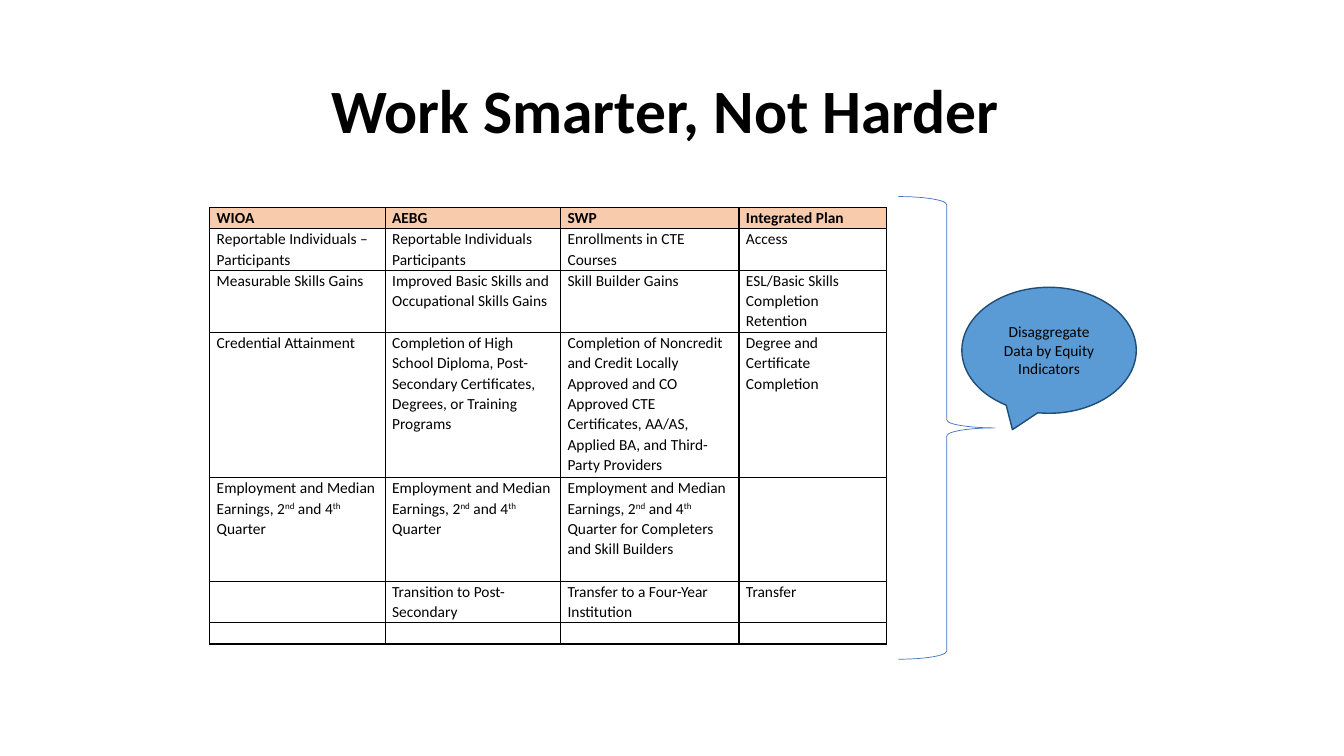
"""Build the Work Smarter, Not Harder slide with its table, brace and callout."""
from lxml import etree
from pptx import Presentation
from pptx import util as u
from pptx.dml.color import RGBColor
from pptx.enum import shapes, text
from pptx.oxml import ns

PX = 9144
FONT = "Calibri"
BLACK = "000000"
COLUMNS = [174, 174, 177, 146]
ROW_HEIGHTS = [21, 41, 62, 144, 103, 41, 21]
EARNINGS = "Employment and Median Earnings, 2^nd^ and 4^th^ Quarter"
ROWS = [
    ["WIOA", "AEBG", "SWP", "Integrated Plan"],
    ["Reportable Individuals –Participants", "Reportable Individuals\nParticipants",
     "Enrollments in CTE Courses", "Access"],
    ["Measurable Skills Gains", "Improved Basic Skills and Occupational Skills Gains",
     "Skill Builder Gains", "ESL/Basic Skills Completion\nRetention"],
    ["Credential Attainment",
     "Completion of High School Diploma, Post-Secondary Certificates, Degrees, "
     "or Training Programs",
     "Completion of Noncredit and Credit Locally Approved and CO Approved CTE "
     "Certificates, AA/AS, Applied BA, and Third-Party Providers",
     "Degree and Certificate Completion"],
    [EARNINGS, EARNINGS, EARNINGS + " for Completers and Skill Builders", ""],
    ["", "Transition to Post-Secondary", "Transfer to a Four-Year Institution", "Transfer"],
    ["", "", "", ""],
]


def px(*values):
    """Turn px lengths into EMU."""
    return [u.Emu(v * PX) for v in values]


def rgb(value):
    """Turn a hex string into a colour."""
    return RGBColor.from_string(value)


def set_attrs(obj, values):
    """Set each attribute of an object from a dict."""
    for name, value in values.items():
        setattr(obj, name, value)


def add_run(p, content, size, bold=False):
    """Add a black run to a paragraph."""
    r = p.add_run()
    r.text = content
    set_attrs(r.font, {"name": FONT, "size": u.Pt(size), "bold": bold})
    r.font.color.rgb = rgb(BLACK)
    return r


def add_title(s, content):
    """Place and format the title placeholder."""
    sp = s.shapes.title
    set_attrs(sp, dict(zip(("left", "top", "width", "height"), px(92, 40, 1150, 145))))
    sp.text_frame.vertical_anchor = text.MSO_ANCHOR.MIDDLE
    p = sp.text_frame.paragraphs[0]
    set_attrs(p, {"alignment": text.PP_ALIGN.CENTER, "line_spacing": 0.9})
    add_run(p, content, 44, True)


def add_borders(cell):
    """Draw a thin black line on each side of a cell."""
    tc_pr = cell._tc.get_or_add_tcPr()
    for side in ("lnL", "lnR", "lnT", "lnB"):
        ln = etree.SubElement(tc_pr, ns.qn("a:" + side), w=str(u.Pt(1)))
        fill = etree.SubElement(ln, ns.qn("a:solidFill"))
        etree.SubElement(fill, ns.qn("a:srgbClr"), val=BLACK)


def fill_cell(cell, content, header):
    """Write a cell, with parts between carets raised as superscript."""
    add_borders(cell)
    margins = dict(zip(("margin_left", "margin_top", "margin_right", "margin_bottom"),
                       px(7, 0, 7, 0)))
    set_attrs(cell, margins)
    if header:
        cell.fill.solid()
        cell.fill.fore_color.rgb = rgb("F8CBAD")
    else:
        cell.fill.background()
    tf = cell.text_frame
    for i, line in enumerate(content.split("\n")):
        p = tf.add_paragraph() if i else tf.paragraphs[0]
        p.line_spacing = 1.07
        if not line:
            etree.SubElement(p._p, ns.qn("a:endParaRPr"), sz="1100")
            continue
        for j, part in enumerate(line.split("^")):
            r = add_run(p, part, 11, header)
            if j % 2:
                r.font._element.set("baseline", "30000")


def add_measures_table(s):
    """Add the table of measures by programme."""
    box = px(208, 206, sum(COLUMNS), sum(ROW_HEIGHTS))
    table = s.shapes.add_table(len(ROWS), len(COLUMNS), *box).table
    set_attrs(table, {"first_row": False, "horz_banding": False})
    for column, width in zip(table.columns, px(*COLUMNS)):
        column.width = width
    for row, height in zip(table.rows, px(*ROW_HEIGHTS)):
        row.height = height
    for i, row in enumerate(ROWS):
        for j, content in enumerate(row):
            fill_cell(table.cell(i, j), content, i == 0)


def add_outline(s, kind, box, line, weight, fill=None):
    """Add a preset shape with a line and an optional fill."""
    sp = s.shapes.add_shape(kind, *px(*box))
    sp.shadow.inherit = False
    sp.line.color.rgb = rgb(line)
    sp.line.width = u.Pt(weight)
    if fill:
        sp.fill.solid()
        sp.fill.fore_color.rgb = rgb(fill)
    else:
        sp.fill.background()
    return sp


def add_callout(s, content):
    """Add the speech bubble and its centred text."""
    sp = add_outline(s, shapes.MSO_SHAPE.OVAL_CALLOUT, (954, 285, 173, 125),
                     "1F4D78", 1, "5B9BD5")
    sp.adjustments[0], sp.adjustments[1] = -0.21, 0.63
    tf = sp.text_frame
    set_attrs(tf, {"word_wrap": True, "vertical_anchor": text.MSO_ANCHOR.MIDDLE})
    p = tf.paragraphs[0]
    p.alignment = text.PP_ALIGN.CENTER
    add_run(p, content, 11)


def main():
    """Build and save the slide."""
    prs = Presentation()
    prs.slide_width, prs.slide_height = px(1333, 750)
    s = prs.slides.add_slide(prs.slide_layouts[5])
    add_title(s, "Work Smarter, Not Harder ")
    add_measures_table(s)
    add_outline(s, shapes.MSO_SHAPE.RIGHT_BRACE, (891, 195, 96, 459), "4472C4", 0.5)
    add_callout(s, "Disaggregate Data by Equity Indicators")
    prs.save("out.pptx")


if __name__ == "__main__":
    main()
